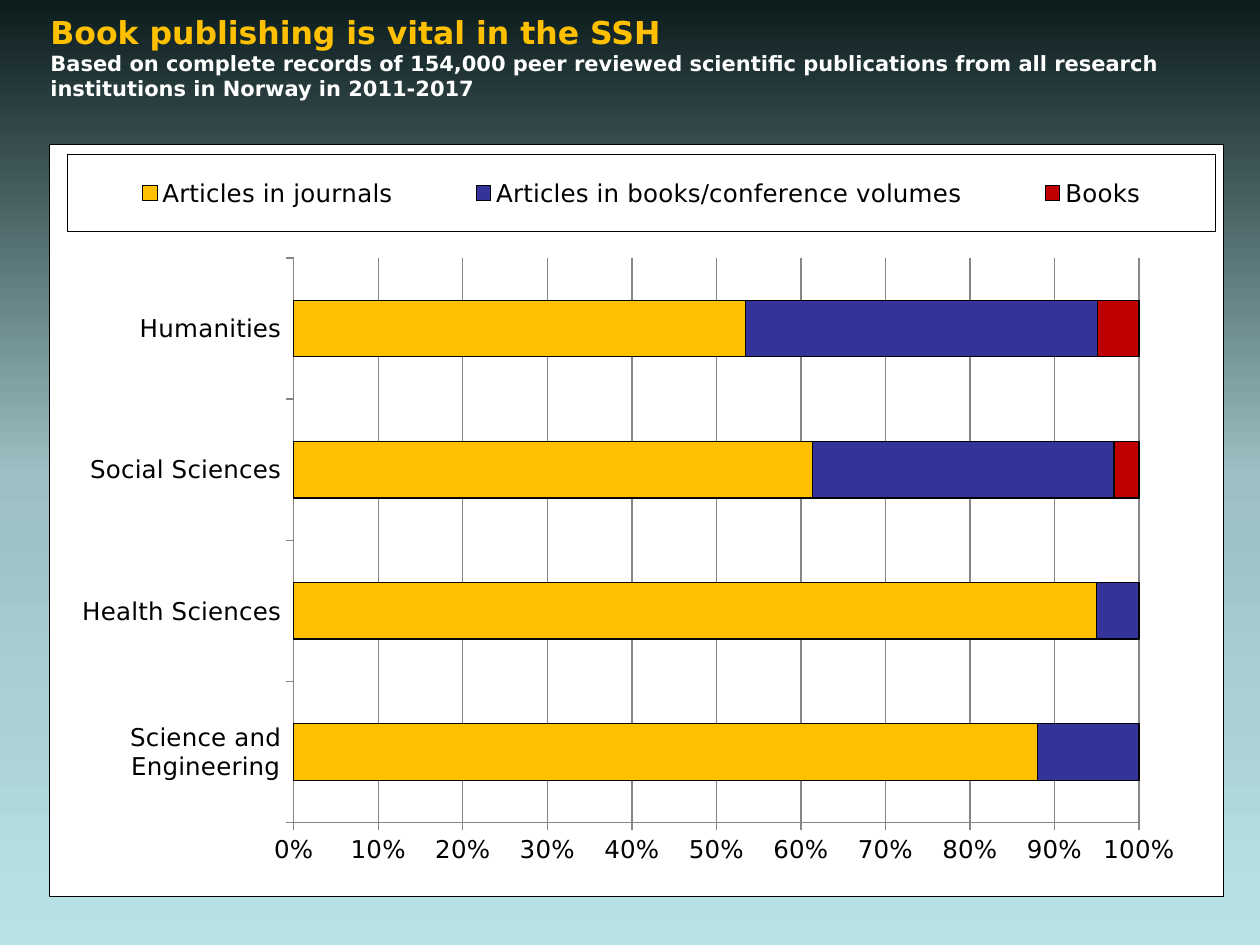
from copy import deepcopy

from lxml.etree import fromstring
from pptx import Presentation
from pptx.chart.data import CategoryChartData
from pptx.dml.color import RGBColor
from pptx.enum.chart import XL_CHART_TYPE, XL_LEGEND_POSITION, XL_TICK_MARK
from pptx.enum.text import MSO_ANCHOR, MSO_AUTO_SIZE, PP_ALIGN
from pptx.oxml.ns import nsdecls, qn
from pptx.util import Pt

FONT = "DejaVu Sans"
BLACK, WHITE, GRAY, AMBER = "000000", "FFFFFF", "868686", "FFC000"
FIELDS = ["Science and Engineering", "Health Sciences", "Social Sciences", "Humanities"]
PUBLICATION_SHARES = [
    ("Articles in journals", [88, 95, 62, 54], AMBER),
    ("Articles in books/conference volumes", [12, 5, 36, 42], "333399"),
    ("Books", [0, 0, 3, 5], "C00000"),
]


def color(hex_value):
    return RGBColor.from_string(hex_value)


def set_line(line, hex_value):
    line.color.rgb = color(hex_value)
    line.width = Pt(0.75)


def paint_background(slide):
    """Vertical gradient from near black through grey-teal to pale teal."""
    fill = slide.background.fill
    fill.gradient()
    fill.gradient_angle = 270
    stop_list = slide.element.find(".//" + qn("a:gsLst"))
    stop_list.insert(1, deepcopy(stop_list[0]))
    stops = [(0, "0C1C1D"), (0.5, "9BBFC2"), (1, "B8E3E6")]
    for stop, (position, hex_value) in zip(fill.gradient_stops, stops):
        stop.position = position
        stop.color.rgb = color(hex_value)


def add_heading(slide, left, top, width, height):
    title = slide.shapes.title
    title.left, title.top, title.width, title.height = left, top, width, height
    frame = title.text_frame
    frame.word_wrap = True
    frame.auto_size = MSO_AUTO_SIZE.NONE
    frame.vertical_anchor = MSO_ANCHOR.MIDDLE
    paragraph = frame.paragraphs[0]
    paragraph.alignment = PP_ALIGN.LEFT
    lines = [
        ("Book publishing is vital in the SSH", 18, AMBER),
        ("Based on complete records of 154,000 peer reviewed scientific publications "
         "from all research institutions in Norway in 2011-2017", 12, WHITE),
    ]
    for index, (text, size, hex_value) in enumerate(lines):
        if index:
            paragraph.add_line_break()
        run = paragraph.add_run()
        run.text = text
        run.font.name = FONT
        run.font.size = Pt(size)
        run.font.bold = True
        run.font.color.rgb = color(hex_value)


def manual_layout(x, y, w, h, target=""):
    """Layout element placed by fractions of the chart area."""
    return fromstring(
        f'<c:layout {nsdecls("c")}><c:manualLayout>{target}'
        '<c:xMode val="edge"/><c:yMode val="edge"/>'
        f'<c:x val="{x}"/><c:y val="{y}"/><c:w val="{w}"/><c:h val="{h}"/>'
        "</c:manualLayout></c:layout>")


def white_panel():
    return fromstring(
        f'<c:spPr {nsdecls("c", "a")}>'
        f'<a:solidFill><a:srgbClr val="{WHITE}"/></a:solidFill>'
        f'<a:ln w="{Pt(0.75)}"><a:solidFill><a:srgbClr val="{BLACK}"/></a:solidFill></a:ln>'
        "</c:spPr>")


def format_axes(chart):
    for axis in (chart.category_axis, chart.value_axis):
        axis.major_tick_mark = XL_TICK_MARK.OUTSIDE
        axis.minor_tick_mark = XL_TICK_MARK.NONE
        set_line(axis.format.line, GRAY)
    chart.category_axis.has_major_gridlines = False
    shares = chart.value_axis
    shares.minimum_scale, shares.maximum_scale, shares.major_unit = 0, 1, 0.1
    shares.has_major_gridlines = True
    set_line(shares.major_gridlines.format.line, GRAY)
    shares.tick_labels.number_format = "0%"
    shares.tick_labels.number_format_is_linked = False


def add_legend(chart):
    chart.has_legend = True
    legend = chart.legend
    legend.position = XL_LEGEND_POSITION.RIGHT
    legend.include_in_layout = False
    element = chart.element.find(".//" + qn("c:legend"))
    for old_layout in element.findall(qn("c:layout")):
        element.remove(old_layout)
    overlay = element.find(qn("c:overlay"))
    overlay.addprevious(manual_layout(0.015, 0.013, 0.978, 0.103))
    overlay.addnext(white_panel())


def add_share_chart(slide, left, top, width, height):
    data = CategoryChartData()
    data.categories = FIELDS
    for name, values, _ in PUBLICATION_SHARES:
        data.add_series(name, values)
    chart = slide.shapes.add_chart(
        XL_CHART_TYPE.BAR_STACKED_100, left, top, width, height, data).chart
    chart.has_title = False
    chart.font.name = FONT
    chart.font.size = Pt(14)
    chart.font.color.rgb = color(BLACK)

    bars = chart.plots[0]
    bars.gap_width, bars.overlap = 150, 100
    bars.vary_by_categories = False
    for series, (_, _, hex_value) in zip(bars.series, PUBLICATION_SHARES):
        series.format.fill.solid()
        series.format.fill.fore_color.rgb = color(hex_value)
        set_line(series.format.line, BLACK)

    format_axes(chart)
    add_legend(chart)
    plot_area = chart.element.find(".//" + qn("c:plotArea"))
    for old_layout in plot_area.findall(qn("c:layout")):
        plot_area.remove(old_layout)
    plot_area.insert(0, manual_layout(
        0.208, 0.151, 0.72, 0.751, '<c:layoutTarget val="inner"/>'))
    chart.element.find(qn("c:chart")).addnext(white_panel())


def main():
    presentation = Presentation()
    presentation.slide_width, presentation.slide_height = Pt(720), Pt(540)
    slide = presentation.slides.add_slide(presentation.slide_layouts[5])
    paint_background(slide)
    add_heading(slide, Pt(21.6), Pt(14.4), Pt(654.5), Pt(36))
    add_share_chart(slide, Pt(28), Pt(82.2), Pt(671.6), Pt(430.4))
    presentation.save("out.pptx")


if __name__ == "__main__":
    main()
